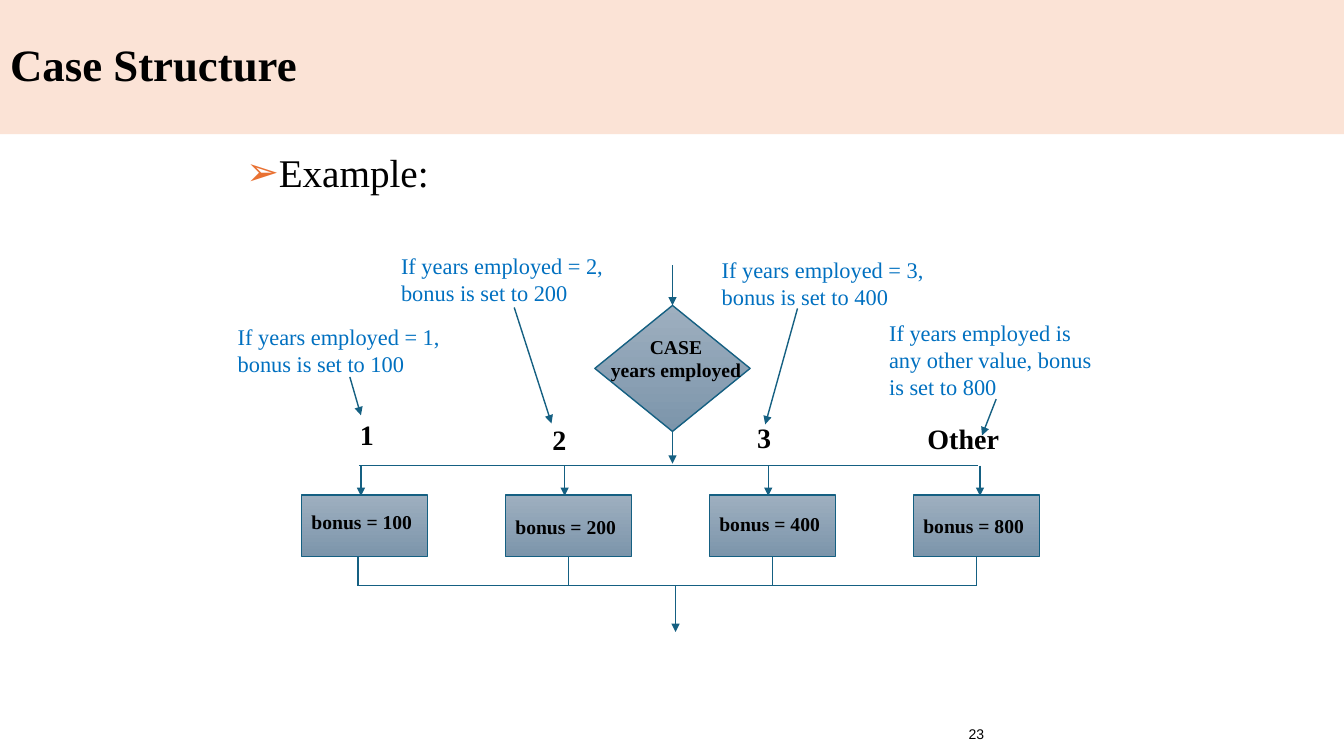
from dataclasses import dataclass

from lxml import etree
from pptx import Presentation
from pptx.dml.color import RGBColor
from pptx.enum.shapes import MSO_CONNECTOR, MSO_SHAPE
from pptx.enum.text import MSO_ANCHOR, MSO_AUTO_SIZE, PP_ALIGN
from pptx.oxml.ns import qn
from pptx.util import Inches, Pt

STRAIGHT = MSO_CONNECTOR.STRAIGHT
RECT, DIAMOND = MSO_SHAPE.RECTANGLE, MSO_SHAPE.FLOWCHART_DECISION
TOP, MIDDLE, BOTTOM = MSO_ANCHOR.TOP, MSO_ANCHOR.MIDDLE, MSO_ANCHOR.BOTTOM
LEFT, CENTER, RIGHT = PP_ALIGN.LEFT, PP_ALIGN.CENTER, PP_ALIGN.RIGHT
NO_FIT = MSO_AUTO_SIZE.NONE

COLORS = {
    "band": "FBE3D6", "ink": "000000", "note": "0070C0", "line": "156082",
    "light": "9EAFBF", "dark": "7C95AB", "bullet": "E97132",
}
SERIF = "Times New Roman"

# Grid: square cells, 133.3 columns by 75 rows
COLS, ROWS = 133.3, 75
CELL = Inches(0.1)

BOX_X, BOX_Y, BOX_W, BOX_H = 29.9, 49.1, 12.5, 6.1
BOX_STEP = 20.23
FORK_Y, JOIN_Y = 46.2, 58.1
NEAR = 0.3


@dataclass(frozen=True)
class Case:
    """One branch: key and its place, label row, inflow and outflow columns, note."""
    key: str
    key_at: tuple[float, float, float]
    bonus: str
    row: float
    inflow: float
    out: float
    note: str
    note_at: tuple[float, float, float]
    arrow: tuple[float, float, float, float]


CASES = [
    Case("1", (34.7, 40.9, 3.5), "bonus = 100", 50.1, 35.8, 35.5,
         "If years employed = 1, bonus is set to 100", (22.6, 31.6, 6.4),
         (34.7, 37.4, 35.8, 41.2)),
    Case("2", (53.8, 41.4, 3.5), "bonus = 200", 50.6, 56, 56.3,
         "If years employed = 2, bonus is set to 200", (38.8, 24.5, 6.4),
         (51, 30.5, 54.7, 42)),
    Case("3", (74.1, 41.2, 3.5), "bonus = 400", 50.3, 76.2, 76.5,
         "If years employed = 3, bonus is set to 400", (70.6, 24.9, 6.4),
         (79.1, 30.6, 75.9, 42.1)),
    Case("Other", (91, 41.3, 10.4), "bonus = 800", 50.5, 97.2, 96.9,
         "If years employed is any other value, bonus is set to 800",
         (87.2, 31.2, 9), (98.8, 39.6, 97.4, 43.2)),
]


def grid(*cells: float) -> list[int]:
    return [round(cell * CELL) for cell in cells]


def rgb(name: str) -> RGBColor:
    return RGBColor.from_string(COLORS[name])


def put(frame, text: str, *, size: float, font: str = SERIF, color: str = "ink",
        bold: bool = False, align=LEFT, anchor=TOP):
    """Fill a text frame with one formatted paragraph and return it."""
    frame.word_wrap = True
    frame.auto_size = NO_FIT
    frame.vertical_anchor = anchor
    para = frame.paragraphs[0]
    para.alignment = align
    for i, part in enumerate(text.splitlines()):
        if i:
            para.add_line_break()
        run = para.add_run()
        run.text = part
        run.font.name, run.font.size, run.font.bold = font, Pt(size), bold
        run.font.color.rgb = rgb(color)
    return para


def label(shapes, text: str, x: float, y: float, w: float, h: float, **fmt):
    box = shapes.add_textbox(*grid(x, y, w, h))
    put(box.text_frame, text, **fmt)


def node(shapes, kind, x: float, y: float, w: float, h: float):
    """Add a shaded flowchart shape."""
    shape = shapes.add_shape(kind, *grid(x, y, w, h))
    shape.shadow.inherit = False
    shape.fill.gradient()
    shape.fill.gradient_angle = 270
    for stop, name in zip(shape.fill.gradient_stops, ("light", "dark")):
        stop.color.rgb = rgb(name)
    shape.line.color.rgb = rgb("line")
    shape.line.width = Pt(1)
    return shape


def line(shapes, x1: float, y1: float, x2: float, y2: float, head: bool = False):
    link = shapes.add_connector(STRAIGHT, *grid(x1, y1, x2, y2))
    link.line.color.rgb = rgb("line")
    link.line.width = Pt(1)
    if head:
        etree.SubElement(link.line._get_or_add_ln(), qn("a:tailEnd"), type="triangle")
    etree.SubElement(link._element.spPr, qn("a:effectLst"))
    return link


def place(shape, x: float, y: float, w: float, h: float):
    shape.left, shape.top, shape.width, shape.height = grid(x, y, w, h)


def head_text(slide):
    """Set the title band, the bulleted line and the page number."""
    title, body = slide.shapes.title, slide.placeholders[1]
    place(title, 0, 0, COLS, 13.3)
    title.fill.solid()
    title.fill.fore_color.rgb = rgb("band")
    para = put(title.text_frame, "Case Structure", size=32, bold=True, anchor=MIDDLE)
    para.line_spacing = 0.9

    place(body, 23.4, 14.7, 82, 58.6)
    para = put(body.text_frame, "Example:", size=28)
    para.line_spacing, para.space_before = 0.9, Pt(10)
    props = para._p.get_or_add_pPr()
    props.set("marL", str(Inches(0.25)))
    props.set("indent", str(-Inches(0.25)))
    tint = etree.SubElement(props, qn("a:buClr"))
    etree.SubElement(tint, qn("a:srgbClr"), val=COLORS["bullet"])
    etree.SubElement(props, qn("a:buChar"), char="➢")

    label(slide.shapes, "23", 94.6, 70.1, 4, 4, size=10, font="Arial",
          align=RIGHT, anchor=BOTTOM)


def branch(shapes, case: Case, x: float):
    """Draw one case with its box at column x."""
    box = node(shapes, RECT, x, BOX_Y, BOX_W, BOX_H)
    line(shapes, case.inflow, FORK_Y, case.inflow, BOX_Y + 0.1, head=True)
    mid = x + BOX_W / 2
    joined = abs(case.out - mid) < NEAR
    out = mid if joined else case.out
    drop = line(shapes, out, BOX_Y + BOX_H, out, JOIN_Y)
    if joined:
        drop.begin_connect(box, 2)
    label(shapes, case.key, *case.key_at, 4.3, size=20, bold=True)
    label(shapes, case.bonus, x, case.row, BOX_W, 3.3, size=14, bold=True)
    left, top, high = case.note_at
    label(shapes, case.note, left, top, 23.3, high, size=16, color="note")
    line(shapes, *case.arrow, head=True)


def chart(shapes):
    """Draw the whole flowchart."""
    test = node(shapes, DIAMOND, 59, 30.3, 15.4, 12.5)
    line(shapes, 66.7, 26.3, 66.7, 30.3, head=True).end_connect(test, 0)
    line(shapes, 66.7, 42.8, 66.7, 46, head=True).begin_connect(test, 2)
    label(shapes, "CASE\nyears employed", 56.9, 32.7, 20.3, 5.7,
          size=14, bold=True, align=CENTER)
    line(shapes, 35.6, FORK_Y, 97, FORK_Y)
    line(shapes, 35.5, JOIN_Y, 96.9, JOIN_Y)
    for i, case in enumerate(CASES):
        branch(shapes, case, BOX_X + i * BOX_STEP)
    line(shapes, 67, JOIN_Y, 67, 62.7, head=True)


def main():
    deck = Presentation()
    deck.slide_width, deck.slide_height = grid(COLS, ROWS)
    slide = deck.slides.add_slide(deck.slide_layouts[1])
    head_text(slide)
    chart(slide.shapes)
    deck.save("out.pptx")


if __name__ == "__main__":
    main()
